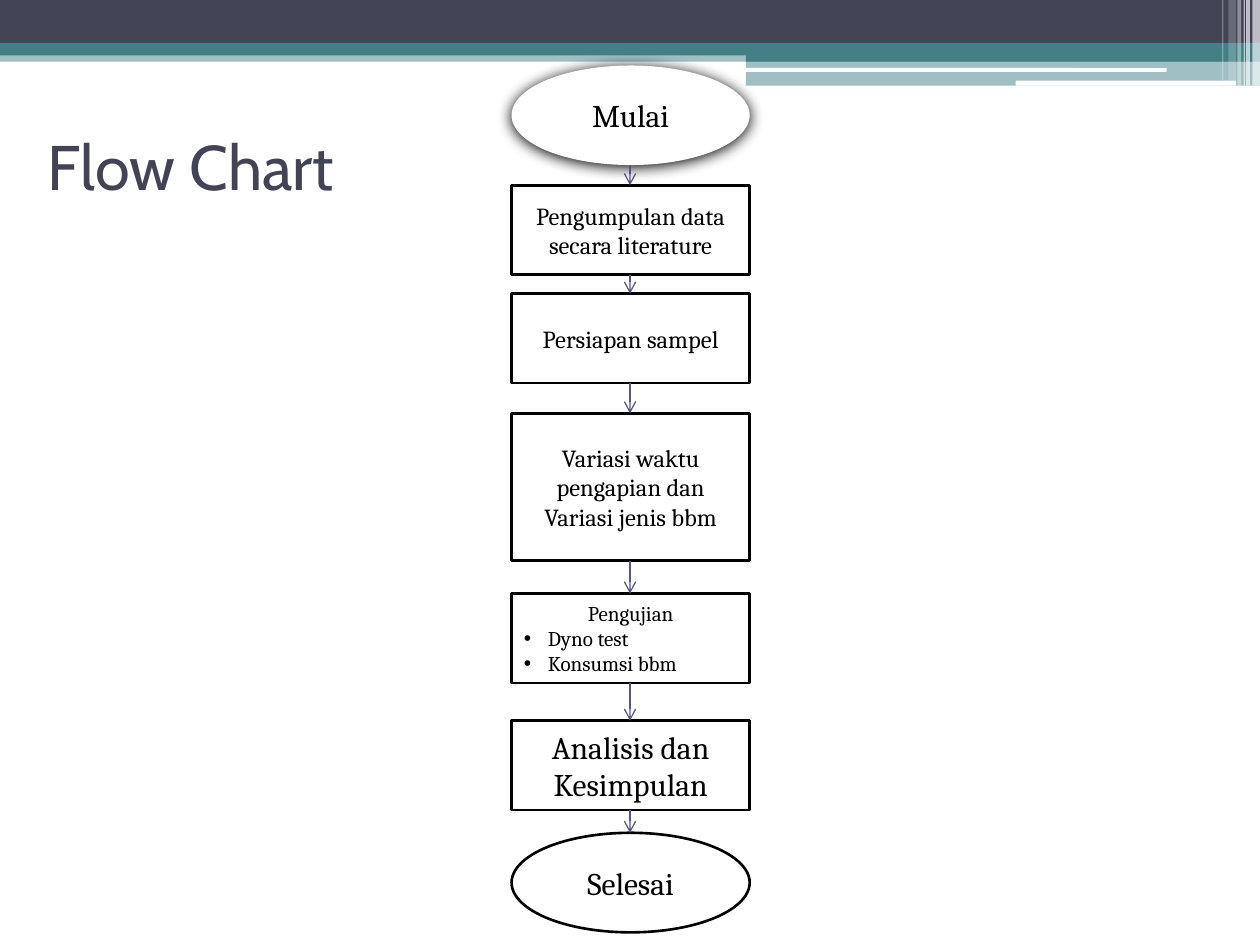
"""Build the flow chart slide of a fuel and ignition timing study."""
import itertools

import pptx
import pptx.chart.data
import pptx.dml.color
import pptx.enum.shapes
import pptx.enum.text
import pptx.oxml
import pptx.oxml.ns
import pptx.util

Inches = pptx.util.Inches
Pt = pptx.util.Pt
RGBColor = pptx.dml.color.RGBColor
MSO_SHAPE = pptx.enum.shapes.MSO_SHAPE
PP_ALIGN = pptx.enum.text.PP_ALIGN

BLACK = RGBColor(0x00, 0x00, 0x00)
WHITE = RGBColor(0xFF, 0xFF, 0xFF)
SLATE = RGBColor(0x42, 0x44, 0x56)
TEAL = RGBColor(0x43, 0x80, 0x86)
INDIGO = RGBColor(0x53, 0x54, 0x8A)

STEP_LEFT, STEP_WIDTH, AXIS = 4.06, 1.89, 5

BANDS = [
    (0, 0.4, 10, 0.09, TEAL, 50),
    (0, 0, 10, 0.34, SLATE, 100),
    (0, 0.34, 10, 0.1, TEAL, 100),
    (5.92, 0.39, 4.08, 0.1, TEAL, 100),
    (5.92, 0.48, 4.08, 0.2, TEAL, 50),
]
RULES = [(5.91, 0.54, 3.35, 0.03), (8.06, 0.64, 1.75, 0.04)]
STRIPES = [
    (9.94, 0.06, 0.68, 65),
    (9.89, 0.03, 0.68, 65),
    (9.87, 0.01, 0.68, 60),
    (9.82, 0.03, 0.68, 40),
    (9.75, 0.06, 0.64, 20),
    (9.7, 0.01, 0.64, 30),
]
STEPS = [
    (MSO_SHAPE.OVAL, 0.52, 0.79, 18, ["Mulai"]),
    (MSO_SHAPE.RECTANGLE, 1.47, 0.71, 14, ["Pengumpulan data secara literature"]),
    (MSO_SHAPE.RECTANGLE, 2.33, 0.71, 14, ["Persiapan sampel"]),
    (MSO_SHAPE.RECTANGLE, 3.28, 1.17, 14,
     ["Variasi waktu pengapian dan Variasi jenis bbm"]),
    (MSO_SHAPE.RECTANGLE, 4.71, 0.71, 12,
     ["Pengujian", "Dyno test", "Konsumsi bbm"]),
    (MSO_SHAPE.RECTANGLE, 5.72, 0.71, 18, ["Analisis dan Kesimpulan"]),
    (MSO_SHAPE.OVAL, 6.61, 0.79, 18, ["Selesai"]),
]


def add_xml(parent, tag, **attributes):
    """Append a DrawingML child element and return it."""
    child = pptx.oxml.parse_xml(f"<a:{tag} {pptx.oxml.ns.nsdecls('a')}/>")
    for key, value in attributes.items():
        child.set(key, str(value))
    parent.append(child)
    return child


def write_text(paragraph, text, *, font, size, color, align=PP_ALIGN.LEFT,
               bullet=False):
    """Write one formatted run into a paragraph."""
    paragraph.alignment = align
    run = paragraph.add_run()
    run.text = text
    run.font.name = font
    run.font.size = Pt(size)
    run.font.color.rgb = color
    if bullet:
        properties = paragraph._p.get_or_add_pPr()
        properties.set("marL", str(Inches(0.19)))
        properties.set("indent", str(-Inches(0.19)))
        add_xml(properties, "buFont", typeface="Arial")
        add_xml(properties, "buChar", char="•")


def add_block(slide, kind, left, top, width, height, color, opacity=100):
    """Add a borderless filled shape, optionally translucent."""
    block = slide.shapes.add_shape(
        kind, Inches(left), Inches(top), Inches(width), Inches(height))
    block.shadow.inherit = False
    block.fill.solid()
    block.fill.fore_color.rgb = color
    block.line.fill.background()
    if opacity < 100:
        fill_color = block._element.spPr.find(
            pptx.oxml.ns.qn("a:solidFill"))[0]
        add_xml(fill_color, "alpha", val=opacity * 1000)
    return block


def add_header(slide):
    """Draw the bands, rules and stripes along the top edge."""
    for *box, color, opacity in BANDS:
        add_block(slide, MSO_SHAPE.RECTANGLE, *box, color, opacity)
    for box in RULES:
        add_block(slide, MSO_SHAPE.ROUNDED_RECTANGLE, *box, WHITE)
    for left, width, height, opacity in STRIPES:
        add_block(slide, MSO_SHAPE.RECTANGLE, left, 0, width, height,
                  WHITE, opacity)


def add_title(slide, text):
    """Place and fill the title placeholder above the header."""
    title = slide.shapes.title
    title.left, title.top = Inches(0.28), Inches(0.64)
    title.width, title.height = Inches(2.76), Inches(1.34)
    frame = title.text_frame
    frame.auto_size = pptx.enum.text.MSO_AUTO_SIZE.NONE
    frame.vertical_anchor = pptx.enum.text.MSO_ANCHOR.MIDDLE
    write_text(frame.paragraphs[0], text, font="Cabin", size=36, color=SLATE)
    slide.shapes._spTree.append(title._element)


def add_step(slide, kind, top, height, size, lines):
    """Add one step: a centred heading and any bulleted details."""
    step = add_block(slide, kind, STEP_LEFT, top, STEP_WIDTH, height, WHITE)
    step.line.color.rgb = BLACK
    step.line.width = Pt(1.5)
    frame = step.text_frame
    frame.word_wrap = True
    frame.vertical_anchor = pptx.enum.text.MSO_ANCHOR.MIDDLE
    for index, line in enumerate(lines):
        paragraph = frame.add_paragraph() if index else frame.paragraphs[0]
        write_text(paragraph, line, font="Cambria", size=size, color=BLACK,
                   align=PP_ALIGN.LEFT if index else PP_ALIGN.CENTER,
                   bullet=index > 0)
    return step


def add_glow_shadow(step):
    """Replace the border of a step with a soft black shadow."""
    step.line.fill.background()
    effects = step._element.spPr.find(pptx.oxml.ns.qn("a:effectLst"))
    shadow = add_xml(effects, "outerShdw", blurRad=Pt(8.5), dist=Pt(1),
                     dir=90 * 60000, algn="tl", rotWithShape=0)
    add_xml(shadow, "srgbClr", val=BLACK)


def add_arrow(slide, start, end):
    """Draw a downward arrow on the chart axis."""
    arrow = slide.shapes.add_connector(
        pptx.enum.shapes.MSO_CONNECTOR.STRAIGHT,
        Inches(AXIS), Inches(start), Inches(AXIS), Inches(end))
    arrow.line.color.rgb = INDIGO
    arrow.line.width = Pt(0.75)
    add_xml(arrow.line._get_or_add_ln(), "tailEnd", type="arrow")
    add_xml(arrow._element.spPr, "effectLst")


def main():
    """Assemble and save the slide."""
    deck = pptx.Presentation()
    deck.slide_width, deck.slide_height = Inches(10), Inches(7.5)
    slide = deck.slides.add_slide(deck.slide_layouts[5])
    add_header(slide)
    add_title(slide, "Flow Chart")
    steps = [add_step(slide, *step) for step in STEPS]
    add_glow_shadow(steps[0])
    for (_, top, height, *_), (_, next_top, *_) in itertools.pairwise(STEPS):
        add_arrow(slide, top + height, next_top)
    deck.save("out.pptx")


if __name__ == "__main__":
    main()
